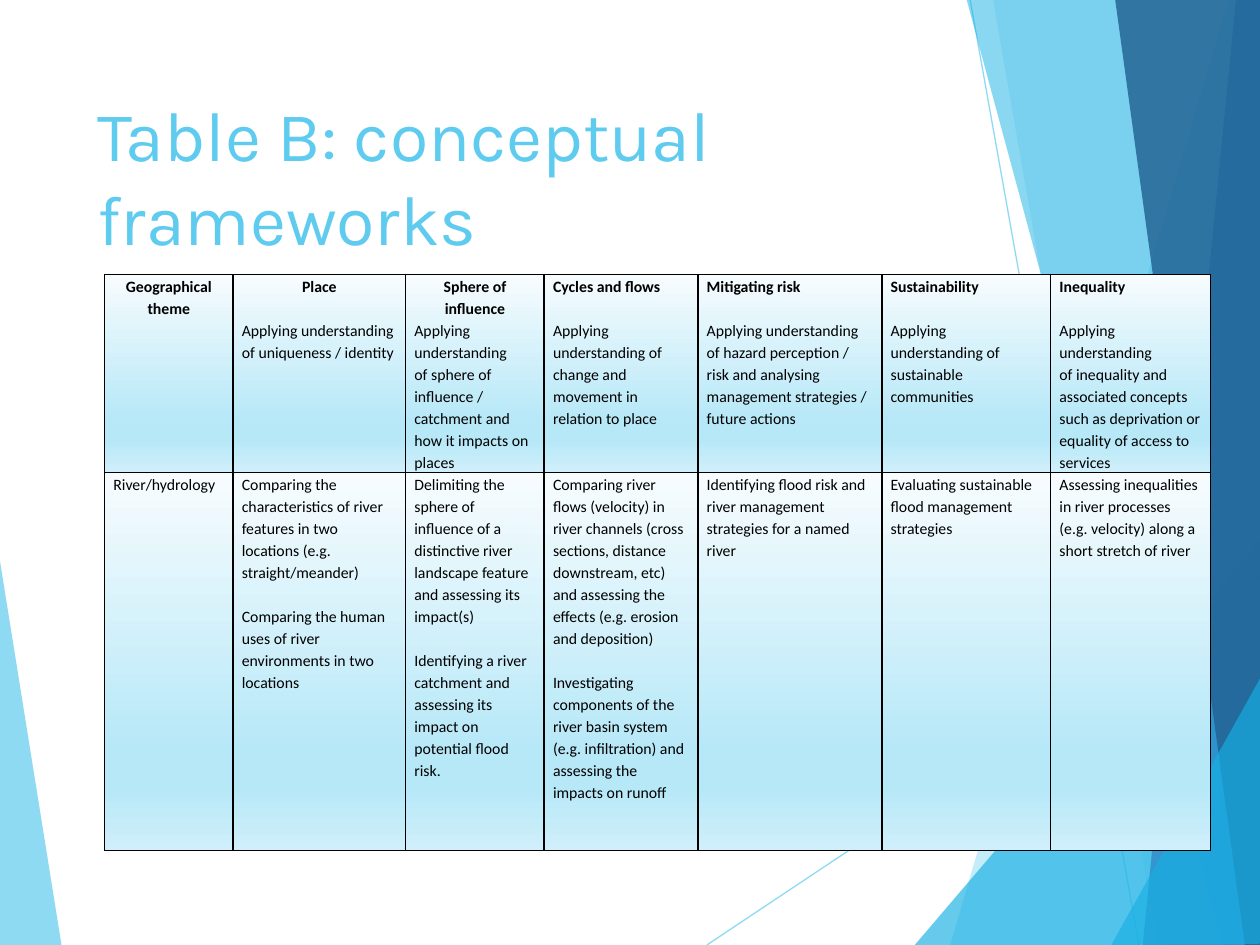
from dataclasses import dataclass

from lxml.etree import SubElement
from pptx import Presentation
from pptx.dml.color import RGBColor
from pptx.enum.shapes import MSO_CONNECTOR as Connector
from pptx.enum.text import MSO_ANCHOR as Anchor, MSO_AUTO_SIZE as AutoSize, PP_ALIGN as Align
from pptx.oxml import parse_xml
from pptx.oxml.ns import nsdecls, qn
from pptx.util import Inches, Pt

COLORS = {
    "sky": "5FCBEF",
    "cyan": "17B0E4",
    "blue": "2E83C3",
    "navy": "226292",
    "black": "000000",
}
CELL_GRADIENT = ((0, "F7FCFE"), (74, "B7E8F8"), (83, "B7E8F8"), (100, "CFEFFA"))
LINE_GAP = 12.6
COLUMN_WIDTHS = (1.02, 1.37, 1.1, 1.22, 1.46, 1.34, 1.27)
ROW_HEIGHTS = (1.57, 3)


@dataclass
class Facet:
    color: str
    opacity: int
    points: tuple


@dataclass
class Ray:
    start: tuple
    end: tuple


@dataclass
class Line:
    text: str
    bold: bool = False
    centered: bool = False
    gap: bool = False


EDGE_FACET = Facet("sky", 70, ((-0.01, 4.39), (0.49, 7.51), (-0.01, 7.5)))
RAYS = (Ray((5.61, 7.5), (10.01, 4.57)), Ray((7.7, 0), (9.04, 7.5)))
FACETS = (
    Facet("sky", 36, ((9.75, 0), (7.54, 7.5), (10.02, 7.51), (10.01, 0.01))),
    Facet("sky", 20, ((7.88, -0.01), (9.19, 7.5), (10.01, 7.5), (10.01, -0.01))),
    Facet("cyan", 66, ((7.26, 7.5), (10, 4.29), (10.01, 7.5))),
    Facet("cyan", 50, ((7.67, -0.01), (9.7, 7.5), (10.01, 7.49), (10.01, -0.01))),
    Facet("blue", 70, ((9.81, -0.01), (9.07, 7.5), (10.01, 7.5), (10, -0.01))),
    Facet("navy", 82, ((8.85, -0.01), (9.88, 7.5), (10.02, 7.5), (10, -0.01))),
    Facet("cyan", 66, ((8.82, 7.5), (10.02, 5.35), (10.02, 7.49))),
)

HEADER_ROW = (
    (Line("Geographical theme", True, True),),
    (Line("Place", True, True),
     Line("Applying understanding of uniqueness / identity", gap=True)),
    (Line("Sphere of influence", True, True),
     Line("Applying understanding"),
     Line("of sphere of influence /"),
     Line("catchment and how it impacts on places")),
    (Line("Cycles and flows", True),
     Line("Applying understanding of change and movement in relation to place", gap=True)),
    (Line("Mitigating risk", True),
     Line("Applying understanding of hazard perception / risk and analysing", gap=True),
     Line("management strategies / future actions")),
    (Line("Sustainability", True),
     Line("Applying understanding of sustainable", gap=True),
     Line("communities")),
    (Line("Inequality", True),
     Line("Applying understanding", gap=True),
     Line("of inequality and"),
     Line("associated concepts such as deprivation or equality of access to services")),
)
RIVER_ROW = (
    (Line("River/hydrology"),),
    (Line("Comparing the characteristics of river features in two locations "
          "(e.g. straight/meander)"),
     Line("Comparing the human uses of river environments in two locations", gap=True)),
    (Line("Delimiting the sphere of influence of a distinctive river landscape feature "
          "and assessing its"),
     Line("impact(s)"),
     Line("Identifying a river catchment and assessing its impact on potential flood risk.",
          gap=True)),
    (Line("Comparing river flows (velocity) in river channels (cross sections, distance "
          "downstream, etc) and assessing the effects (e.g. erosion and deposition)"),
     Line("Investigating components of the river basin system (e.g. infiltration) "
          "and assessing the impacts on runoff", gap=True)),
    (Line("Identifying flood risk and river management strategies for a named river"),),
    (Line("Evaluating sustainable flood management strategies"),),
    (Line("Assessing inequalities in river processes (e.g. velocity) along a short "
          "stretch of river"),),
)


def apply_format(target, values: dict) -> None:
    for name, value in values.items():
        setattr(target, name, value)


def set_opacity(element, percent: int) -> None:
    color = next(element.iter(qn("a:srgbClr")))
    SubElement(color, qn("a:alpha"), val=str(percent * 1000))


def draw_facet(slide, facet: Facet) -> None:
    start, *rest = [(Inches(x), Inches(y)) for x, y in facet.points]
    builder = slide.shapes.build_freeform(*start)
    builder.add_line_segments(rest, close=True)
    shape = builder.convert_to_shape()
    shape.shadow.inherit = False
    shape.fill.solid()
    shape.fill.fore_color.rgb = RGBColor.from_string(COLORS[facet.color])
    set_opacity(shape.element.spPr, facet.opacity)
    shape.line.fill.background()


def draw_ray(slide, ray: Ray) -> None:
    ends = [Inches(value) for value in ray.start + ray.end]
    connector = slide.shapes.add_connector(Connector.STRAIGHT, *ends)
    connector.line.width = Pt(0.75)
    connector.line.color.rgb = RGBColor.from_string(COLORS["sky"])
    properties = connector.element.spPr
    set_opacity(properties, 70)
    SubElement(properties, qn("a:effectLst"))


def paint_cell(cell) -> None:
    properties = cell._tc.get_or_add_tcPr()
    for side in ("lnL", "lnR", "lnT", "lnB"):
        properties.append(parse_xml(
            f'<a:{side} {nsdecls("a")} w="12700"><a:solidFill>'
            f'<a:srgbClr val="{COLORS["black"]}"/></a:solidFill></a:{side}>'))
    stops = "".join(
        f'<a:gs pos="{position * 1000}"><a:srgbClr val="{color}"/></a:gs>'
        for position, color in CELL_GRADIENT)
    properties.append(parse_xml(
        f'<a:gradFill {nsdecls("a")} rotWithShape="1"><a:gsLst>{stops}</a:gsLst>'
        '<a:lin ang="5400000" scaled="0"/></a:gradFill>'))


def write_cell(cell, lines: tuple) -> None:
    apply_format(cell, {
        "margin_left": Inches(0.07), "margin_right": Inches(0.07),
        "margin_top": 0, "margin_bottom": 0, "vertical_anchor": Anchor.TOP})
    frame = cell.text_frame
    for index, line in enumerate(lines):
        paragraph = frame.add_paragraph() if index else frame.paragraphs[0]
        apply_format(paragraph, {
            "alignment": Align.CENTER if line.centered else Align.LEFT,
            "line_spacing": 1.15,
            "space_before": Pt(LINE_GAP if line.gap else 0)})
        run = paragraph.add_run()
        run.text = line.text
        apply_format(run.font, {"name": "Calibri", "size": Pt(9), "bold": line.bold})
        run.font.color.rgb = RGBColor.from_string(COLORS["black"])


def draw_title(slide) -> None:
    title = slide.shapes.title
    apply_format(title, {
        "left": Inches(0.67), "top": Inches(0.67),
        "width": Inches(6.94), "height": Inches(1.44)})
    title.text = "Table B: conceptual frameworks"
    apply_format(title.text_frame, {
        "word_wrap": True, "auto_size": AutoSize.NONE, "vertical_anchor": Anchor.BOTTOM})
    paragraph = title.text_frame.paragraphs[0]
    paragraph.alignment = Align.LEFT
    font = paragraph.runs[0].font
    apply_format(font, {"name": "Karla", "size": Pt(40)})
    font.color.rgb = RGBColor.from_string(COLORS["sky"])


def draw_framework_table(slide) -> None:
    table = slide.shapes.add_table(
        len(ROW_HEIGHTS), len(COLUMN_WIDTHS), Inches(0.83), Inches(2.18),
        Inches(sum(COLUMN_WIDTHS)), Inches(sum(ROW_HEIGHTS))).table
    apply_format(table, {"first_row": False, "horz_banding": False})
    for column, width in zip(table.columns, COLUMN_WIDTHS):
        column.width = Inches(width)
    for row, height, contents in zip(table.rows, ROW_HEIGHTS, (HEADER_ROW, RIVER_ROW)):
        row.height = Inches(height)
        for cell, lines in zip(row.cells, contents):
            write_cell(cell, lines)
            paint_cell(cell)


def main() -> None:
    presentation = Presentation()
    apply_format(presentation, {"slide_width": Inches(10), "slide_height": Inches(7.5)})
    slide = presentation.slides.add_slide(presentation.slide_layouts[5])
    draw_facet(slide, EDGE_FACET)
    for ray in RAYS:
        draw_ray(slide, ray)
    for facet in FACETS:
        draw_facet(slide, facet)
    draw_title(slide)
    draw_framework_table(slide)
    presentation.save("out.pptx")


if __name__ == "__main__":
    main()
